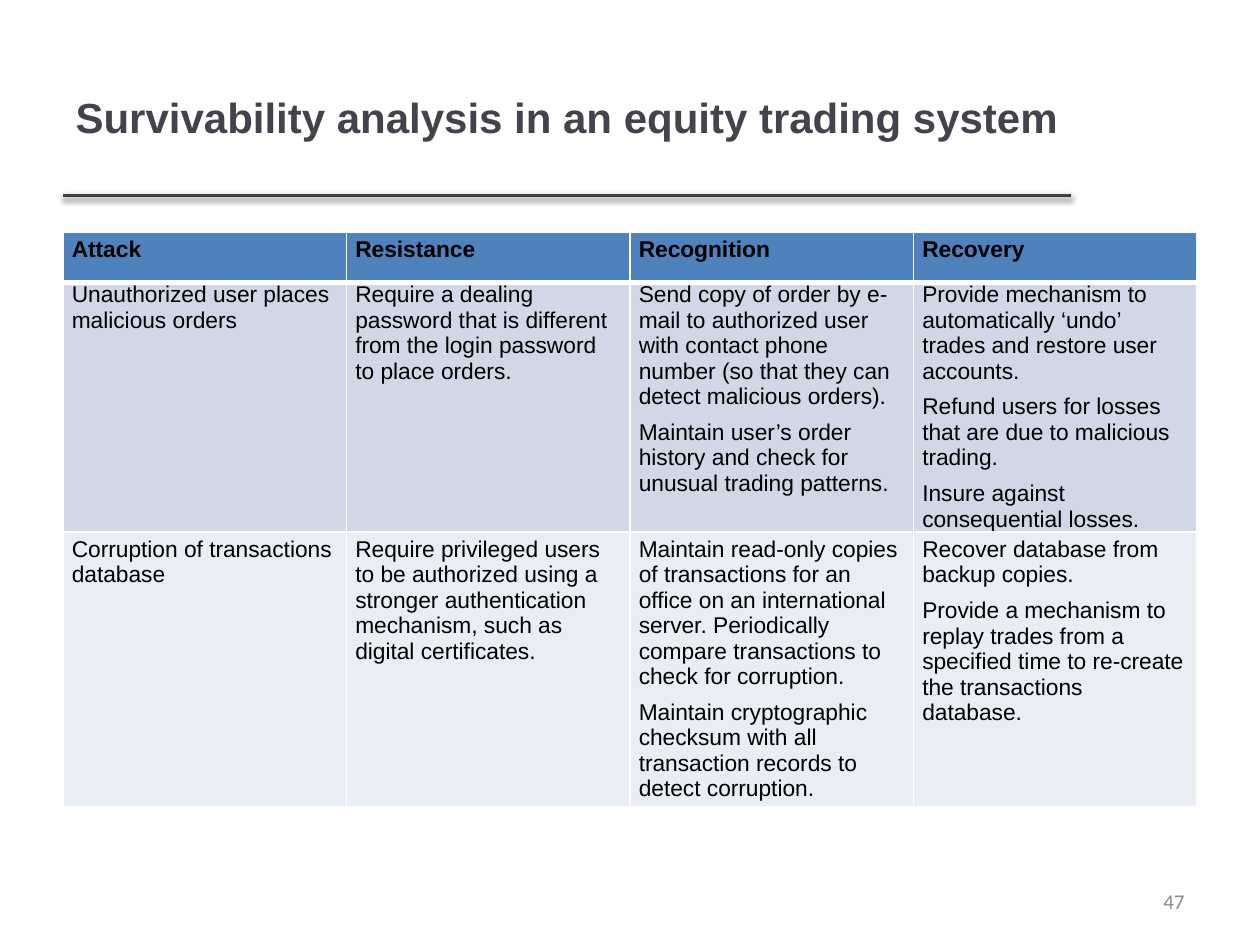
from typing import NamedTuple

from lxml import etree
from pptx import Presentation
from pptx import util as u
from pptx.dml.color import RGBColor
from pptx.enum import shapes, text
from pptx.oxml import ns

COLORS = {
    "title": "46424D",
    "rule": "404040",
    "header": "4F81BD",
    "band_dark": "D0D8E8",
    "band_light": "E9EDF4",
    "border": "FFFFFF",
    "body": "000000",
    "number": "8C8C8C",
}
WIDTH, HEIGHT = u.Inches(10), u.Inches(7.5)
MARGIN = 0.05
COLUMNS = 4


class Style(NamedTuple):
    font: str
    size: int
    color: str
    bold: bool = False
    alignment: text.PP_ALIGN = text.PP_ALIGN.LEFT
    space: int = 0


class Row(NamedTuple):
    height: float
    fill: str
    style: Style
    padding: float
    bottom_border: int
    cells: list[list[str]]


TITLE = Style("Arial", 24, "title", True)
HEADER = Style("Arial", 13, "body", True, text.PP_ALIGN.JUSTIFY)
BODY = Style("Arial", 13, "body", space=6)
NUMBER = Style("Calibri", 12, "number", alignment=text.PP_ALIGN.RIGHT)

ROWS = [
    Row(0.4, "header", HEADER, 0.04, 3,
        [["Attack"], ["Resistance"], ["Recognition"], ["Recovery"]]),
    Row(1.98, "band_dark", BODY, 0, 1, [
        ["Unauthorized user places malicious orders"],
        ["Require a dealing password that is different from the login "
         "password to place orders."],
        ["Send copy of order by e-mail to authorized user with contact phone "
         "number (so that they can detect malicious orders).",
         "Maintain user’s order history and check for unusual trading patterns."],
        ["Provide mechanism to automatically ‘undo’ trades and restore user accounts.",
         "Refund users for losses that are due to malicious trading.",
         "Insure against consequential losses."],
    ]),
    Row(2.18, "band_light", BODY, 0.04, 1, [
        ["Corruption of transactions database"],
        ["Require privileged users to be authorized using a stronger "
         "authentication mechanism, such as digital certificates."],
        ["Maintain read-only copies of transactions for an office on an "
         "international server. Periodically compare transactions to check "
         "for corruption.",
         "Maintain cryptographic checksum with all transaction records to "
         "detect corruption."],
        ["Recover database from backup copies.",
         "Provide a mechanism to replay trades from a specified time to "
         "re-create the transactions database."],
    ]),
]


def across(share: float) -> int:
    return round(WIDTH * share)


def down(share: float) -> int:
    return round(HEIGHT * share)


def color(name: str) -> RGBColor:
    return RGBColor.from_string(COLORS[name])


def write(frame, paragraphs: list[str], style: Style) -> None:
    frame.word_wrap = True
    frame.text = "\n".join(paragraphs)
    for index, paragraph in enumerate(frame.paragraphs):
        paragraph.alignment = style.alignment
        paragraph.space_before = u.Pt(style.space if index else 0)
        for run in paragraph.runs:
            run.font.name = style.font
            run.font.size = u.Pt(style.size)
            run.font.bold = style.bold
            run.font.color.rgb = color(style.color)


def add_border(cell, side: str, points: int) -> None:
    properties = cell._tc.get_or_add_tcPr()
    line = etree.SubElement(properties, ns.qn(f"a:ln{side}"), w=str(u.Pt(points)))
    fill = etree.SubElement(line, ns.qn("a:solidFill"))
    etree.SubElement(fill, ns.qn("a:srgbClr"), val=COLORS["border"])


def add_title(slide) -> None:
    title = slide.shapes.title
    title.left, title.top = across(MARGIN), down(0.04)
    title.width, title.height = across(0.8), u.Inches(1.25)
    write(title.text_frame, ["Survivability analysis in an equity trading system"], TITLE)
    title.text_frame.auto_size = text.MSO_AUTO_SIZE.NONE
    title.text_frame.vertical_anchor = text.MSO_ANCHOR.MIDDLE


def add_rule(slide) -> None:
    top = u.Inches(1.55)
    rule = slide.shapes.add_connector(
        shapes.MSO_CONNECTOR.STRAIGHT, across(MARGIN), top, across(0.85), top)
    rule.line.color.rgb = color("rule")
    rule.line.width = u.Pt(2)
    effects = etree.SubElement(rule._element.spPr, ns.qn("a:effectLst"))
    shadow = etree.SubElement(
        effects, ns.qn("a:outerShdw"), blurRad=str(u.Pt(3.1)),
        dist=str(u.Pt(1.6)), dir="5400000", rotWithShape="0")
    shade = etree.SubElement(shadow, ns.qn("a:srgbClr"), val=COLORS["body"])
    etree.SubElement(shade, ns.qn("a:alpha"), val="38000")


def add_analysis_table(slide) -> None:
    height = u.Inches(sum(row.height for row in ROWS))
    table = slide.shapes.add_table(
        len(ROWS), COLUMNS, across(MARGIN), u.Inches(1.84),
        across(1 - 2 * MARGIN), height).table
    for table_row, row in zip(table.rows, ROWS):
        table_row.height = u.Inches(row.height)
        for cell, paragraphs in zip(table_row.cells, row.cells):
            cell.margin_left = cell.margin_right = u.Inches(0.07)
            cell.margin_top = cell.margin_bottom = u.Inches(row.padding)
            for side in "LRT":
                add_border(cell, side, 3 if side == "T" and row is ROWS[1] else 1)
            add_border(cell, "B", row.bottom_border)
            cell.fill.solid()
            cell.fill.fore_color.rgb = color(row.fill)
            write(cell.text_frame, paragraphs, row.style)


def add_slide_number(slide) -> None:
    width = u.Inches(2.33)
    box = slide.shapes.add_textbox(
        across(1 - MARGIN) - width, u.Inches(6.95), width, u.Inches(0.4))
    write(box.text_frame, ["47"], NUMBER)
    box.text_frame.vertical_anchor = text.MSO_ANCHOR.MIDDLE


def main() -> None:
    presentation = Presentation()
    presentation.slide_width, presentation.slide_height = WIDTH, HEIGHT
    slide = presentation.slides.add_slide(presentation.slide_layouts[5])
    add_title(slide)
    add_rule(slide)
    add_analysis_table(slide)
    add_slide_number(slide)
    presentation.save("out.pptx")


if __name__ == "__main__":
    main()
